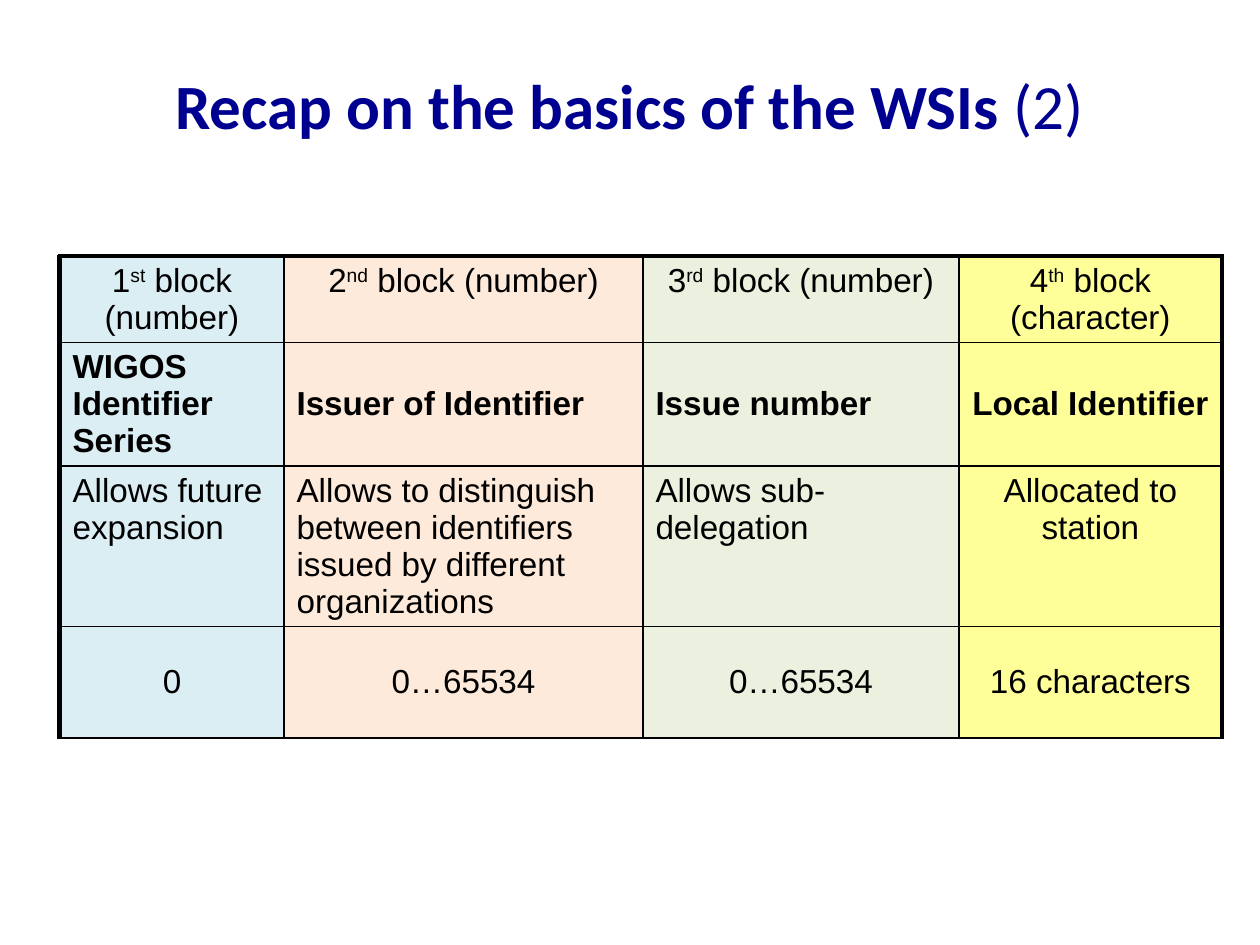
from dataclasses import dataclass

from lxml.etree import SubElement
from pptx import Presentation
from pptx.dml.color import RGBColor as Color
from pptx.enum.text import MSO_ANCHOR as Anchor, PP_ALIGN as Align
from pptx.oxml.ns import qn
from pptx.util import Pt

PX = 914400 // 126


@dataclass(frozen=True)
class Theme:
    title_color: str = "000090"
    text_color: str = "000000"
    border_color: str = "000000"
    column_fills: tuple = ("DBEEF4", "FDEADA", "EBF1DE", "FFFF99")
    title_font: str = "Calibri"
    table_font: str = "Arial"
    title_size: int = 36
    table_size: int = 19
    outer_border: float = 2.25
    inner_border: float = 1


THEME = Theme()
COLUMN_WIDTHS = (224, 359, 316, 263)
ROW_HEIGHTS = (72, 111, 111, 111)
TABLE_HEIGHT = 508
STAGE_POSITIONS = ((59, 257), (60, 257), (60, 257), (60, 256))
C, L = Align.CENTER, Align.LEFT
ROWS = (
    {
        "texts": (
            ("1", "st", " block (number)"),
            ("2", "nd", " block (number)"),
            ("3", "rd", " block (number)"),
            ("4", "th", " block (character)"),
        ),
        "aligns": (C, C, C, C), "anchor": Anchor.TOP, "bold": False,
    },
    {
        "texts": (("WIGOS Identifier Series",), ("Issuer of Identifier",),
                  ("Issue number",), ("Local Identifier",)),
        "aligns": (L, L, L, C), "anchor": Anchor.MIDDLE, "bold": True,
    },
    {
        "texts": (
            ("Allows future expansion",),
            ("Allows to distinguish between identifiers issued by different organizations",),
            ("Allows sub-delegation",),
            ("Allocated to station",),
        ),
        "aligns": (L, L, L, C), "anchor": Anchor.TOP, "bold": False,
    },
    {
        "texts": (("0",), ("0…65534",), ("0…65534",), ("16 characters",)),
        "aligns": (C, C, C, C), "anchor": Anchor.MIDDLE, "bold": False,
    },
)


def set_values(target, values):
    for name, value in values.items():
        setattr(target, name, value)


def add_run(paragraph, text, color, **font_values):
    run = paragraph.add_run()
    run.text = text
    set_values(run.font, font_values)
    run.font.color.rgb = Color.from_string(color)
    return run


def fill_title(slide):
    title = slide.shapes.title
    set_values(title, {"left": 38 * PX, "top": 38 * PX,
                       "width": 1183 * PX, "height": 132 * PX})
    title.text_frame.vertical_anchor = Anchor.MIDDLE
    paragraph = title.text_frame.paragraphs[0]
    paragraph.alignment = Align.CENTER
    for text, bold in (("Recap on the basics of the WSIs", True), (" (2)", False)):
        add_run(paragraph, text, THEME.title_color, name=THEME.title_font,
                size=Pt(THEME.title_size), bold=bold)


def add_borders(cell, row, column):
    thick_sides = {
        "a:lnL": column == 0,
        "a:lnR": column == len(COLUMN_WIDTHS) - 1,
        "a:lnT": row == 0,
        "a:lnB": False,
    }
    properties = cell._tc.get_or_add_tcPr()
    for tag, is_thick in thick_sides.items():
        width = THEME.outer_border if is_thick else THEME.inner_border
        line = SubElement(properties, qn(tag), w=str(Pt(width)))
        fill = SubElement(line, qn("a:solidFill"))
        SubElement(fill, qn("a:srgbClr"), val=THEME.border_color)


def color_cell(cell, column, filled_columns):
    if column < filled_columns:
        cell.fill.solid()
        cell.fill.fore_color.rgb = Color.from_string(THEME.column_fills[column])
    else:
        cell.fill.background()


def write_cell(cell, texts, align, anchor, bold):
    cell.vertical_anchor = anchor
    paragraph = cell.text_frame.paragraphs[0]
    paragraph.alignment = align
    for index, text in enumerate(texts):
        run = add_run(paragraph, text, THEME.text_color, name=THEME.table_font,
                      size=Pt(THEME.table_size), bold=bold)
        if index == 1:
            run._r.get_or_add_rPr().set("baseline", "30000")


def add_block_table(slide, left, top, filled_columns):
    shape = slide.shapes.add_table(
        len(ROWS), len(COLUMN_WIDTHS), left * PX, top * PX,
        sum(COLUMN_WIDTHS) * PX, TABLE_HEIGHT * PX)
    table = shape.table
    set_values(table, {"first_row": False, "horz_banding": False})
    for column, width in zip(table.columns, COLUMN_WIDTHS):
        column.width = width * PX
    for row, height in zip(table.rows, ROW_HEIGHTS):
        row.height = height * PX
    shape.height = TABLE_HEIGHT * PX
    for row, content in enumerate(ROWS):
        for column, texts in enumerate(content["texts"]):
            cell = table.cell(row, column)
            add_borders(cell, row, column)
            color_cell(cell, column, filled_columns)
            write_cell(cell, texts, content["aligns"][column],
                       content["anchor"], content["bold"])


def main():
    presentation = Presentation()
    set_values(presentation, {"slide_width": 1260 * PX, "slide_height": 945 * PX})
    slide = presentation.slides.add_slide(presentation.slide_layouts[5])
    fill_title(slide)
    for filled_columns, (left, top) in enumerate(STAGE_POSITIONS, start=1):
        add_block_table(slide, left, top, filled_columns)
    presentation.save("out.pptx")


if __name__ == "__main__":
    main()
